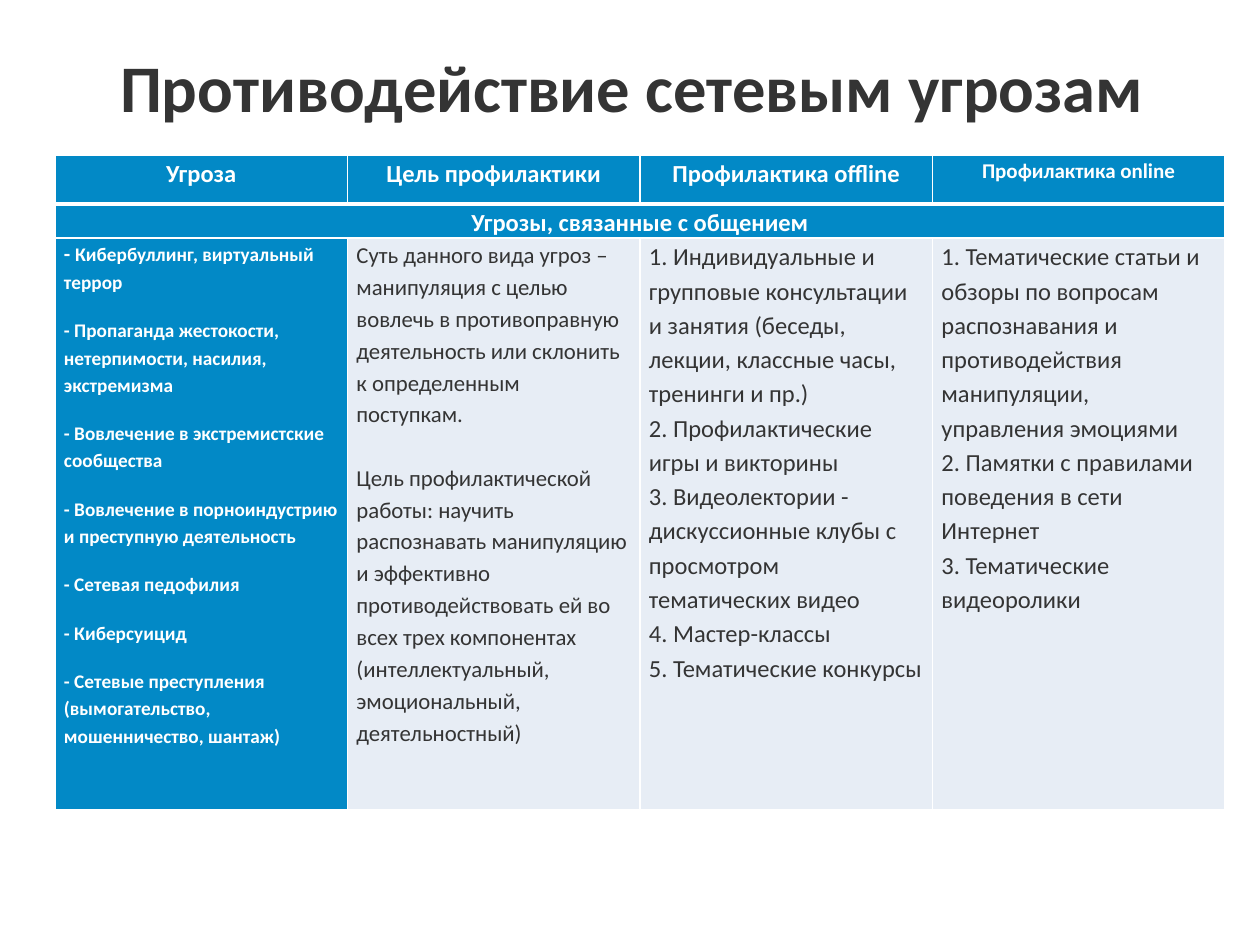
from lxml import etree
from pptx import Presentation
from pptx.dml.color import RGBColor
from pptx.enum.text import MSO_ANCHOR, PP_ALIGN
from pptx.oxml.ns import qn
from pptx.util import Pt

CENTER, LEFT = PP_ALIGN.CENTER, PP_ALIGN.LEFT
MIDDLE, TOP = MSO_ANCHOR.MIDDLE, MSO_ANCHOR.TOP
PX = 914400 / 126

THEME = {
    "font": "Calibri",
    "dark": "343434", "white": "FFFFFF", "blue": "0289C6", "pale": "E7EDF5",
    "title": 38, "head": 14, "small_head": 12, "threat": 11, "goal": 13, "list": 14,
}

HEADINGS = ["Угроза", "Цель профилактики", "Профилактика offline", "Профилактика online"]
SECTION = "Угрозы, связанные с общением"
THREATS = [
    "Кибербуллинг, виртуальный террор",
    "- Пропаганда жестокости, нетерпимости, насилия, экстремизма",
    "- Вовлечение в экстремистские сообщества",
    "- Вовлечение в порноиндустрию и преступную деятельность",
    "- Сетевая педофилия",
    "- Киберсуицид",
    "- Сетевые преступления (вымогательство, мошенничество, шантаж)",
]
GOALS = [
    "Суть данного вида угроз – манипуляция с целью вовлечь в противоправную "
    "деятельность или склонить к определенным поступкам.",
    "Цель профилактической работы: научить распознавать манипуляцию и эффективно "
    "противодействовать ей во всех трех компонентах (интеллектуальный, "
    "эмоциональный, деятельностный)",
]
OFFLINE = [
    "1. Индивидуальные и групповые консультации и занятия (беседы, лекции, "
    "классные часы, тренинги и пр.)",
    "2. Профилактические игры и викторины",
    "3. Видеолектории - дискуссионные клубы с просмотром тематических видео",
    "4. Мастер-классы",
    "5. Тематические конкурсы",
]
ONLINE = [
    "1. Тематические статьи и обзоры по вопросам распознавания и противодействия "
    "манипуляции, управления эмоциями",
    "2. Памятки с правилами поведения в сети Интернет",
    "3. Тематические видеоролики",
]


def px(length):
    return round(length * PX)


def write(frame, lines, size, color, bold, align=LEFT, spacing=1.15, before=0, after=0):
    frame.text = "\n".join(lines)
    frame.word_wrap = True
    for index, para in enumerate(frame.paragraphs):
        para.alignment = align
        para.line_spacing = spacing
        para.space_before = Pt(before if index else 0)
        para.space_after = Pt(after)
        for span in para.runs:
            span.font.name = THEME["font"]
            span.font.size = Pt(THEME[size])
            span.font.bold = bold
            span.font.color.rgb = RGBColor.from_string(THEME[color])


deck = Presentation()
deck.slide_width, deck.slide_height = px(1260), px(945)
page = deck.slides.add_slide(deck.slide_layouts[6])

# Title
title = page.shapes.add_textbox(px(94), px(37), px(1077), px(98))
title.text_frame.vertical_anchor = MIDDLE
write(title.text_frame, ["Противодействие сетевым угрозам"], "title", "dark", True, CENTER, 1.0)

# Table grid
table = page.shapes.add_table(3, 4, px(55), px(155), px(1170), px(655)).table
for row, height in zip(table.rows, [49, 34, 572]):
    row.height = px(height)

# Cell margins, borders and fills
for row_index in range(3):
    for column_index in range(4):
        cell = table.cell(row_index, column_index)
        cell.margin_left = cell.margin_right = px(9)
        cell.margin_top = cell.margin_bottom = 0
        cell.vertical_anchor = TOP
        properties = cell._tc.get_or_add_tcPr()
        for side in ("lnL", "lnR", "lnT", "lnB"):
            under_header = (row_index, side) in [(0, "lnB"), (1, "lnT")]
            line = etree.SubElement(properties, qn(f"a:{side}"), w=str(Pt(3 if under_header else 1)))
            solid = etree.SubElement(line, qn("a:solidFill"))
            etree.SubElement(solid, qn("a:srgbClr"), val=THEME["white"])
        fill = "pale" if row_index == 2 and column_index > 0 else "blue"
        cell.fill.solid()
        cell.fill.fore_color.rgb = RGBColor.from_string(THEME[fill])

# Header and section rows
for column_index, heading in enumerate(HEADINGS):
    size = "small_head" if column_index == 3 else "head"
    write(table.cell(0, column_index).text_frame, [heading], size, "white", True, CENTER)
table.cell(1, 0).merge(table.cell(1, 3))
write(table.cell(1, 0).text_frame, [SECTION], "head", "white", True, CENTER)

# Threats column, whose first dash is a little larger
threats = table.cell(2, 0).text_frame
write(threats, ["- "] + THREATS[1:], "threat", "white", True, before=6, after=6)
first_para = threats.paragraphs[0]
first_para.runs[0].font.size = Pt(THEME["small_head"])
span = first_para.add_run()
span.text = THREATS[0]
span.font.name = THEME["font"]
span.font.size = Pt(THEME["threat"])
span.font.bold = True
span.font.color.rgb = RGBColor.from_string(THEME["white"])

# Goal and prevention columns
write(table.cell(2, 1).text_frame, GOALS, "goal", "dark", False, before=18)
for column_index, measures in [(2, OFFLINE), (3, ONLINE)]:
    write(table.cell(2, column_index).text_frame, measures, "list", "dark", False)

deck.save("out.pptx")
